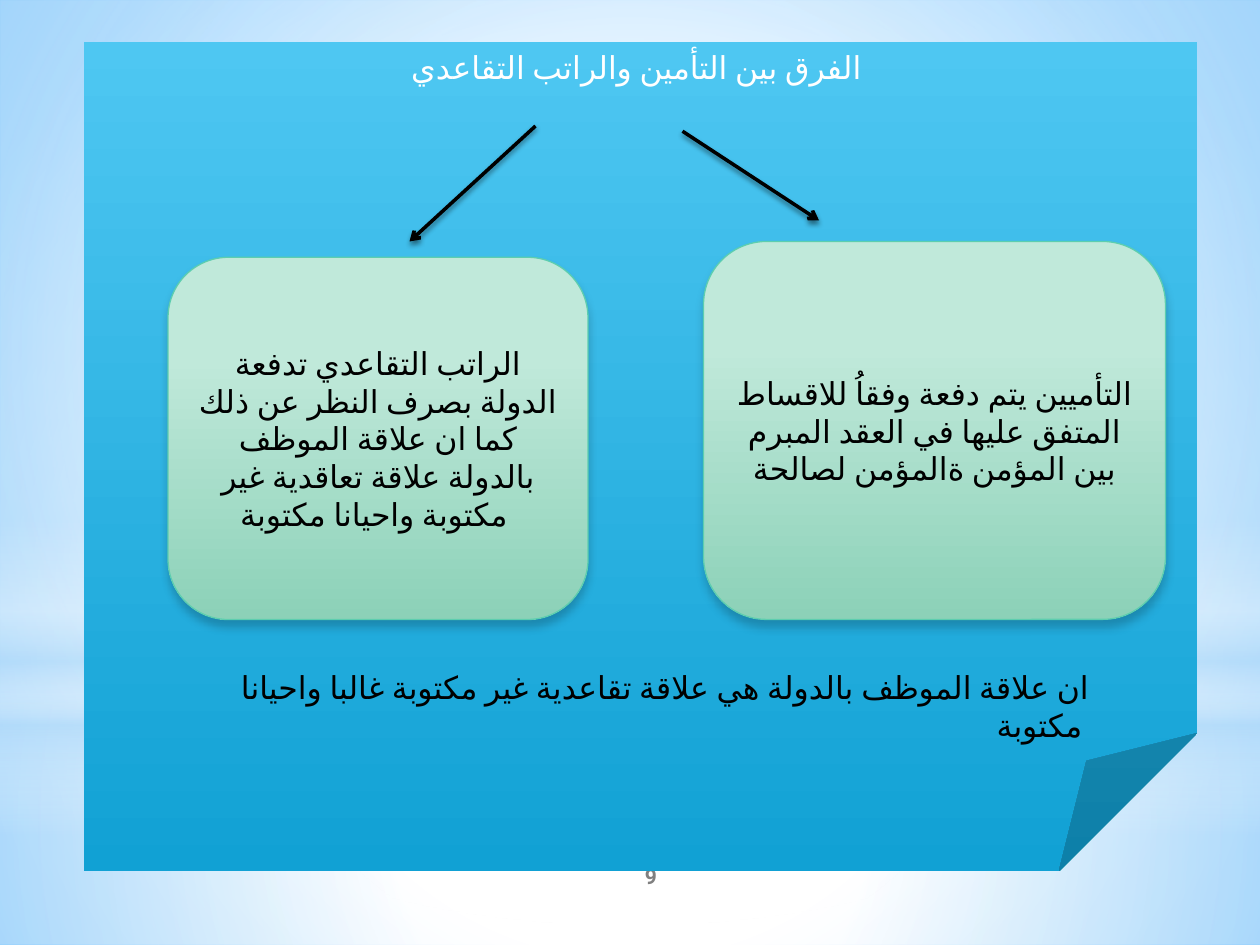
from dataclasses import dataclass
from typing import Any, Optional

from lxml.etree import SubElement
from pptx import Presentation
from pptx.dml.color import RGBColor
from pptx.enum.lang import MSO_LANGUAGE_ID
from pptx.enum.shapes import MSO_CONNECTOR, MSO_SHAPE
from pptx.enum.text import MSO_ANCHOR, MSO_AUTO_SIZE, PP_ALIGN
from pptx.oxml.ns import qn
from pptx.util import Pt

WHITE = RGBColor(0xFF, 0xFF, 0xFF)
BLACK = RGBColor(0x00, 0x00, 0x00)
GRAY = RGBColor(0x80, 0x80, 0x80)
SKY = RGBColor(0x63, 0xBC, 0xFF)
PALE = RGBColor(0xB4, 0xDC, 0xFA)
AQUA = RGBColor(0x4E, 0xC7, 0xF2)
BLUE = RGBColor(0x11, 0xA1, 0xD4)
MINT = RGBColor(0xC0, 0xE9, 0xDA)
SAGE = RGBColor(0x8C, 0xD1, 0xB8)
GREEN = RGBColor(0x5D, 0xCE, 0xAF)
FONT = "Roboto"
MID = (50, 50, 50, 50)


@dataclass
class Grad:
    """Stops are (position, colour, opacity) in percent; without a focus it runs down."""
    stops: list[tuple[int, RGBColor, int]]
    focus: Optional[tuple[int, int, int, int]] = None


@dataclass
class Glow:
    alpha: int
    blur: float
    dist: float


@dataclass
class Block:
    kind: MSO_SHAPE
    area: tuple[float, float, float, float]
    grad: Grad
    edge: Optional[RGBColor] = None
    glow: Optional[Glow] = None
    text: str = ""


@dataclass
class Arrow:
    start: tuple[float, float]
    end: tuple[float, float]


BACK = Grad([(0, WHITE, 100), (42, WHITE, 100), (100, SKY, 100)], (24, 44, 24, 12))
HAZE = [
    Block(MSO_SHAPE.RECTANGLE, (0, 402, 720, 138),
          Grad([(0, WHITE, 91), (37, WHITE, 76), (100, PALE, 79)], MID)),
    Block(MSO_SHAPE.RECTANGLE, (0, 0, 720, 402),
          Grad([(0, WHITE, 89), (48, WHITE, 62), (100, PALE, 79)], MID)),
    Block(MSO_SHAPE.RECTANGLE, (0, 297, 720, 180),
          Grad([(0, WHITE, 0), (29, WHITE, 30), (45, PALE, 40),
                (55, WHITE, 26), (65, PALE, 60), (100, WHITE, 0)])),
    Block(MSO_SHAPE.OVAL, (0, 126, 720, 402),
          Grad([(0, WHITE, 100), (56, WHITE, 0)], MID)),
]
SHEET = Block(MSO_SHAPE.FOLDED_CORNER, (48, 24, 636, 474),
              Grad([(0, AQUA, 100), (100, BLUE, 100)]))
CARD = Grad([(28, MINT, 100), (100, SAGE, 100)])
SOFT, DARK = Glow(20, 5, 4), Glow(45, 3.1, 1.8)
CARDS = [
    Block(MSO_SHAPE.ROUNDED_RECTANGLE, (402, 138, 264, 216), CARD, GREEN, SOFT,
          "التأميين يتم دفعة وفقاُ للاقساط المتفق عليها في العقد المبرم "
          "بين المؤمن ةالمؤمن لصالحة"),
    Block(MSO_SHAPE.ROUNDED_RECTANGLE, (96, 147, 240, 207), CARD, GREEN, SOFT,
          "الراتب التقاعدي تدفعة الدولة بصرف النظر عن ذلك كما ان علاقة الموظف "
          "بالدولة علاقة تعاقدية غير مكتوبة واحيانا مكتوبة "),
]
ARROWS = [Arrow((306, 72), (234, 138)), Arrow((390, 75), (468, 126))]
TITLE = "الفرق بين التأمين والراتب التقاعدي "
NOTE = "ان علاقة الموظف بالدولة هي علاقة تقاعدية غير مكتوبة غالبا واحيانا مكتوبة "


def tint(node: Any, color: RGBColor, alpha: int) -> None:
    clr = SubElement(node, qn("a:srgbClr"), val=str(color))
    if alpha < 100:
        SubElement(clr, qn("a:alpha"), val=str(alpha * 1000))


def paint(fill: Any, props: Any, grad: Grad) -> None:
    """Swap a plain fill for the gradient, keeping its place in the XML."""
    fill.solid()
    old = props.find(qn("a:solidFill"))
    new = props.makeelement(qn("a:gradFill"), {"rotWithShape": "1"})
    stops = SubElement(new, qn("a:gsLst"))
    for pos, color, alpha in grad.stops:
        tint(SubElement(stops, qn("a:gs"), pos=str(pos * 1000)), color, alpha)
    if grad.focus:
        ring = SubElement(new, qn("a:path"), path="circle")
        sides = {k: str(v * 1000) for k, v in zip("ltrb", grad.focus)}
        SubElement(ring, qn("a:fillToRect"), sides)
    else:
        SubElement(new, qn("a:lin"), ang="5400000", scaled="0")
    props.replace(old, new)


def shade(effects: Any, glow: Glow) -> None:
    drop = SubElement(effects, qn("a:outerShdw"), blurRad=str(Pt(glow.blur)),
                      dist=str(Pt(glow.dist)), dir="5400000", rotWithShape="0")
    tint(drop, BLACK, glow.alpha)


def write(shape: Any, text: str, color: RGBColor = BLACK, size: float = 18,
          align: PP_ALIGN = PP_ALIGN.CENTER, anchor: MSO_ANCHOR = MSO_ANCHOR.MIDDLE,
          bold: bool = False, rtl: bool = False) -> None:
    frame = shape.text_frame
    look = {"word_wrap": True, "auto_size": MSO_AUTO_SIZE.NONE, "vertical_anchor": anchor}
    for key, value in look.items():
        setattr(frame, key, value)
    para = frame.paragraphs[0]
    para.alignment = align
    para._p.get_or_add_pPr().set("rtl", str(int(rtl)))
    run = para.add_run()
    run.text = text
    form = {"name": FONT, "size": Pt(size), "bold": bold,
            "language_id": MSO_LANGUAGE_ID.ARABIC}
    for key, value in form.items():
        setattr(run.font, key, value)
    run.font.color.rgb = color
    SubElement(run._r.get_or_add_rPr(), qn("a:cs"), typeface=FONT)


def place(slide: Any, block: Block) -> None:
    shape = slide.shapes.add_shape(block.kind, *map(Pt, block.area))
    props = shape._element.spPr
    paint(shape.fill, props, block.grad)
    if block.edge:
        shape.line.color.rgb = block.edge
        shape.line.width = Pt(0.75)
    else:
        shape.line.fill.background()
    shape.shadow.inherit = False
    if block.glow:
        shade(props.find(qn("a:effectLst")), block.glow)
    if block.text:
        write(shape, block.text)


def point(slide: Any, arrow: Arrow) -> None:
    line = slide.shapes.add_connector(
        MSO_CONNECTOR.STRAIGHT, *map(Pt, arrow.start + arrow.end))
    line.line.color.rgb = BLACK
    line.line.width = Pt(2)
    SubElement(line.line._get_or_add_ln(), qn("a:tailEnd"), type="arrow")
    shade(SubElement(line._element.spPr, qn("a:effectLst")), DARK)


def label(slide: Any, area: tuple[float, float, float, float], text: str,
          **look: Any) -> None:
    write(slide.shapes.add_textbox(*map(Pt, area)), text, **look)


def main() -> None:
    deck = Presentation()
    deck.slide_width, deck.slide_height = Pt(720), Pt(540)
    slide = deck.slides.add_slide(deck.slide_layouts[5])
    fill = slide.background.fill
    fill.solid()
    paint(fill, slide._element.find(".//" + qn("p:bgPr")), BACK)

    for block in HAZE:
        place(slide, block)
    label(slide, (300, 486, 144, 29), "9", color=GRAY, size=12, bold=True, rtl=True)
    place(slide, SHEET)

    title = slide.shapes.title
    left, top, width, _ = SHEET.area
    spot = {"left": left, "top": top, "width": width, "height": 36}
    for key, value in spot.items():
        setattr(title, key, Pt(value))
    write(title, TITLE, color=WHITE, anchor=MSO_ANCHOR.TOP)
    slide.shapes._spTree.append(title._element)  # bring in front of the sheet

    for arrow in ARROWS:
        point(slide, arrow)
    for card in CARDS:
        place(slide, card)
    label(slide, (96, 378, 534, 51), NOTE, align=PP_ALIGN.RIGHT, anchor=MSO_ANCHOR.TOP)
    deck.save("out.pptx")


if __name__ == "__main__":
    main()
